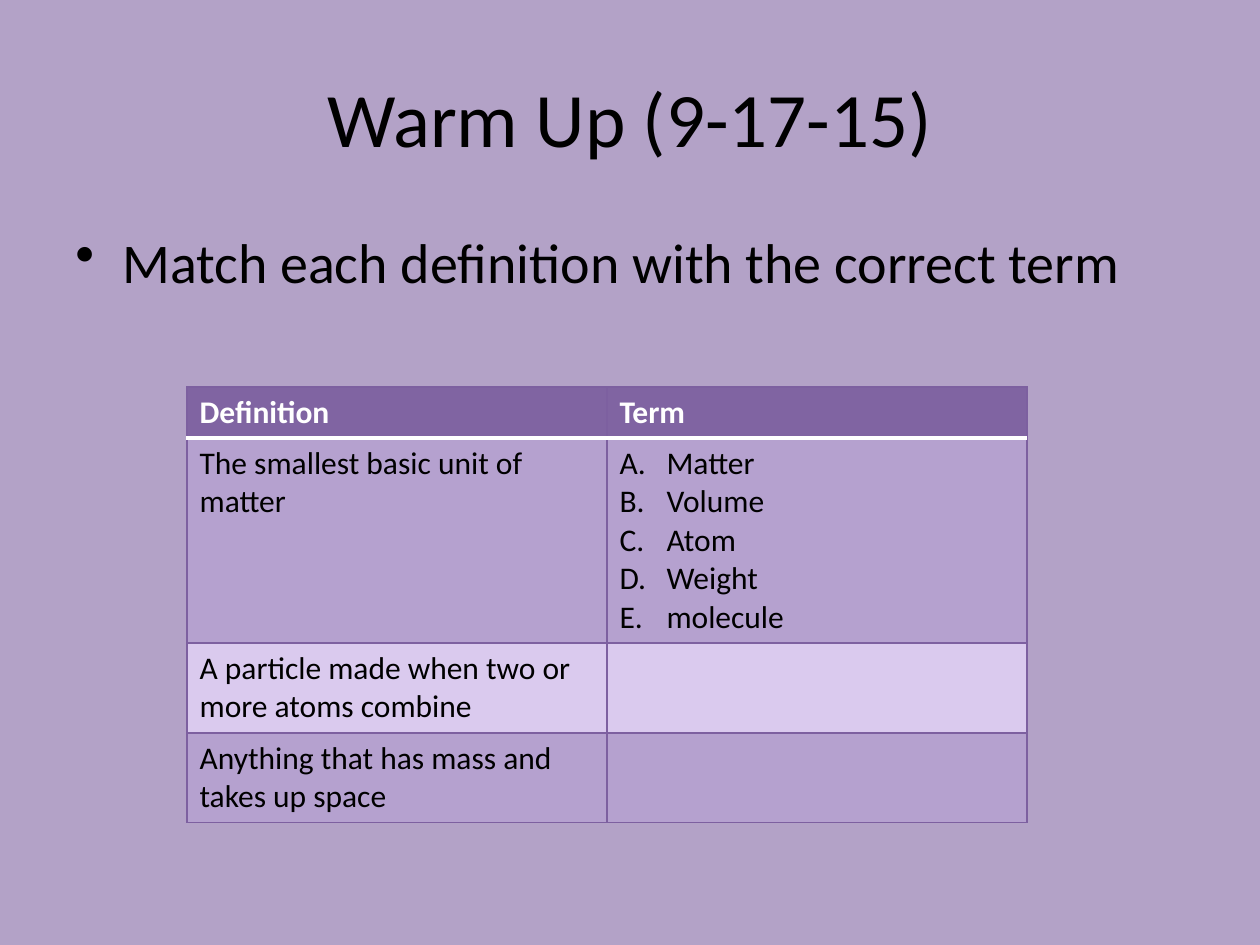
import pptx
import pptx.util
import pptx.dml.color
import pptx.enum.text
import pptx.oxml
import pptx.oxml.ns
from lxml import etree

RGB = pptx.dml.color.RGBColor
BACK = RGB(0xB3, 0xA2, 0xC7)
HEAD = RGB(0x80, 0x64, 0xA2)
DARK = RGB(0xB5, 0xA1, 0xCF)
LIGHT = RGB(0xDA, 0xCA, 0xEE)
EDGE = RGB(0x7D, 0x60, 0xA0)
BLACK = RGB(0, 0, 0)
WHITE = RGB(0xFF, 0xFF, 0xFF)
PX = 914400 / 126
HANG = 47


def px(count):
    return pptx.util.Emu(round(count * PX))


def style(para, size, color, bullet=None):
    """Set the font and, if given, a hanging bullet element."""
    para.font.name = "Calibri"
    para.font.size = pptx.util.Pt(size)
    para.font.color.rgb = color
    if bullet is not None:
        props = para._p.get_or_add_pPr()
        props.set("marL", str(px(HANG)))
        props.set("indent", str(-px(HANG)))
        tag, key, value = bullet
        mark = etree.Element(pptx.oxml.ns.qn(tag))
        mark.set(key, value)
        props.insert_element_before(mark, "a:tabLst", "a:defRPr", "a:extLst")


deck = pptx.Presentation()
deck.slide_width, deck.slide_height = px(1260), px(945)
slide = deck.slides.add_slide(deck.slide_layouts[6])
slide.background.fill.solid()
slide.background.fill.fore_color.rgb = BACK

# Title and prompt
title = slide.shapes.add_textbox(px(63), px(38), px(1134), px(157)).text_frame
title.word_wrap = True
title.vertical_anchor = pptx.enum.text.MSO_ANCHOR.MIDDLE
title.text = "Warm Up (9-17-15)"
title.paragraphs[0].alignment = pptx.enum.text.PP_ALIGN.CENTER
style(title.paragraphs[0], 44, BLACK)

body = slide.shapes.add_textbox(px(63), px(221), px(1134), px(624)).text_frame
body.word_wrap = True
body.text = "Match each definition with the correct term"
body.paragraphs[0].space_before = pptx.util.Pt(6)
style(body.paragraphs[0], 32, BLACK, ("a:buChar", "char", "•"))

# Matching table
rows = [
    ("Definition", "Term"),
    ("The smallest basic unit of matter", "Matter\nVolume\nAtom\nWeight\nmolecule"),
    ("A particle made when two or more atoms combine", ""),
    ("Anything that has mass and takes up space", ""),
]
tall = [51, 205, 90, 90]
fills = [HEAD, DARK, LIGHT, DARK]
table = slide.shapes.add_table(4, 2, px(187), px(387), px(840), px(sum(tall))).table
for r, texts in enumerate(rows):
    table.rows[r].height = px(tall[r])
    for c, text in enumerate(texts):
        cell = table.cell(r, c)
        cell.text = text
        listed = r > 0 and c == 1 and text
        for para in cell.text_frame.paragraphs:
            bullet = ("a:buAutoNum", "type", "alphaUcPeriod") if listed else None
            style(para, 18, BLACK if r else WHITE, bullet)
            para.font.bold = r == 0
        props = cell._tc.get_or_add_tcPr()
        for side in "LRTB":
            rule = (r, side) in [(0, "B"), (1, "T")]
            color, width = (WHITE, 2) if rule else (EDGE, 0.75)
            props.append(pptx.oxml.parse_xml(
                f'<a:ln{side} {pptx.oxml.ns.nsdecls("a")} w="{pptx.util.Pt(width)}">'
                f'<a:solidFill><a:srgbClr val="{color}"/></a:solidFill></a:ln{side}>'))
        cell.fill.solid()
        cell.fill.fore_color.rgb = fills[r]

deck.save("out.pptx")
